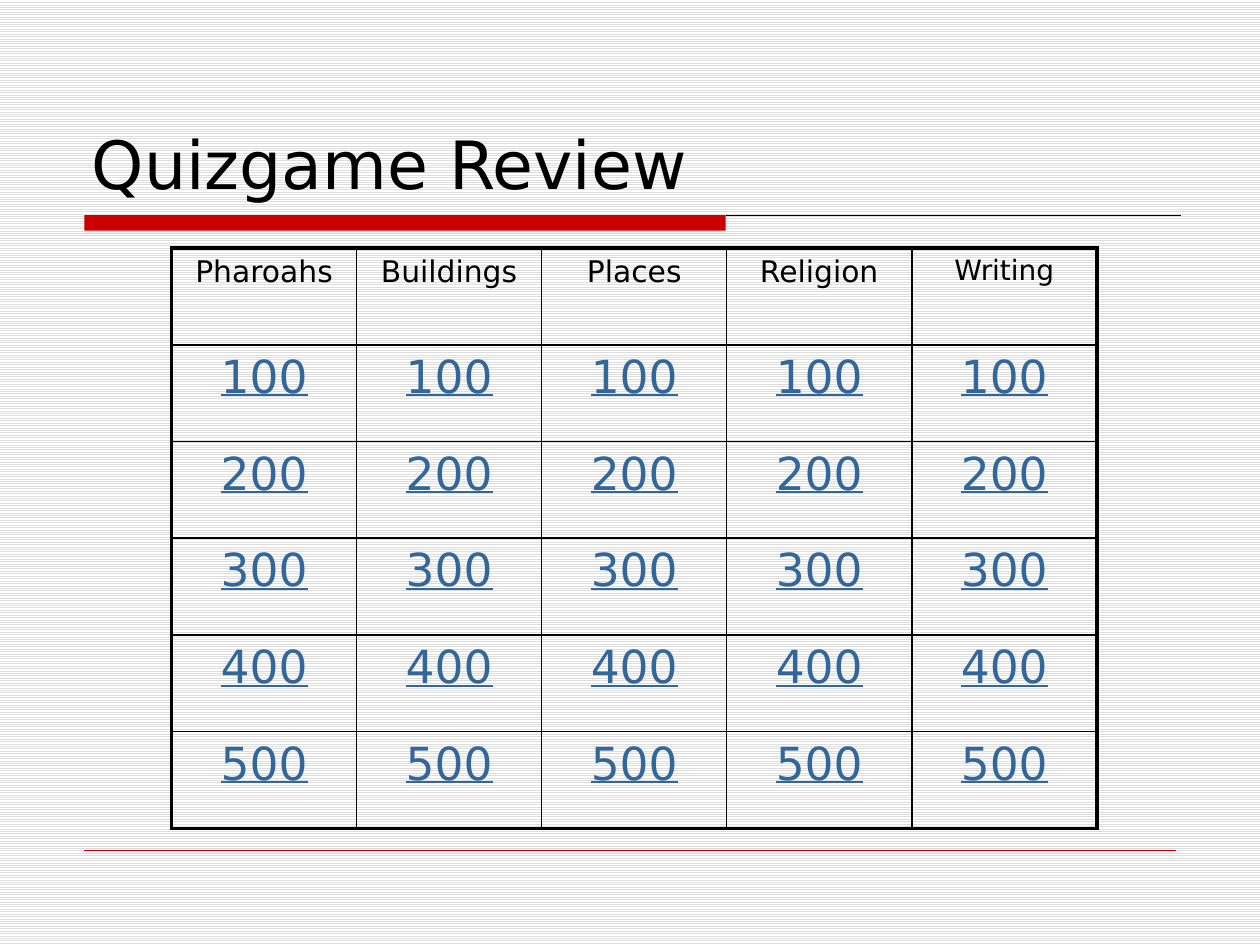
from dataclasses import dataclass

from lxml import etree
from pptx import Presentation
from pptx.dml.color import RGBColor
from pptx.enum import dml, shapes, text
from pptx.oxml import ns
from pptx.util import Cm, Pt


@dataclass(frozen=True)
class Theme:
    font: str = "DejaVu Sans"
    ink: str = "000000"
    red: str = "CC0000"
    link: str = "336699"
    stripe: str = "DDDDDD"
    paper: str = "FFFFFF"
    title: int = 38
    head: int = 17
    small: int = 16
    score: int = 26
    edge: float = 2.25
    grid: float = 1


theme = Theme()


def style(para, size, color):
    for run in para.runs:
        run.font.name = theme.font
        run.font.size = Pt(size)
        run.font.color.rgb = RGBColor.from_string(color)


def rule(x1, x2, y, color, width):
    line = slide.shapes.add_connector(
        shapes.MSO_CONNECTOR.STRAIGHT, Cm(x1), Cm(y), Cm(x2), Cm(y))
    line.line.color.rgb = RGBColor.from_string(color)
    line.line.width = Pt(width)
    etree.SubElement(line._element.spPr, ns.qn("a:effectLst"))


prs = Presentation()
prs.slide_width, prs.slide_height = Cm(25.4), Cm(19.05)
slide = prs.slides.add_slide(prs.slide_layouts[6])

# Striped background
back = slide.background.fill
back.patterned()
back.pattern = dml.MSO_PATTERN.LIGHT_HORIZONTAL
back.fore_color.rgb = RGBColor.from_string(theme.stripe)
back.back_color.rgb = RGBColor.from_string(theme.paper)

# Title bar and rules
bar = slide.shapes.add_shape(
    shapes.MSO_SHAPE.RECTANGLE, Cm(1.7), Cm(4.34), Cm(12.93), Cm(0.31))
bar.shadow.inherit = False
bar.fill.solid()
bar.fill.fore_color.rgb = RGBColor.from_string(theme.red)
bar.line.fill.background()
rule(14.63, 23.8, 4.34, theme.ink, 0.75)
rule(1.7, 23.7, 17.15, theme.red, 0.25)

# Title
box = slide.shapes.add_textbox(Cm(1.6), Cm(0.84), Cm(22.23), Cm(3.38))
frame = box.text_frame
frame.word_wrap = True
frame.vertical_anchor = text.MSO_ANCHOR.BOTTOM
frame.text = "Quizgame Review"
style(frame.paragraphs[0], theme.title, theme.ink)

# Score board: one row of topics, then one row for each score
topics = ["Pharoahs", "Buildings", "Places", "Religion", "Writing"]
rows = [topics] + [[str(score)] * len(topics) for score in range(100, 600, 100)]
wide, high = 3.73, 1.95
table = slide.shapes.add_table(
    len(rows), len(topics), Cm(3.46), Cm(5),
    Cm(wide * len(topics)), Cm(high * len(rows))).table
table.first_row = table.horz_banding = False
for col in table.columns:
    col.width = Cm(wide)
for row in table.rows:
    row.height = Cm(high)

for r, row in enumerate(rows):
    for c, label in enumerate(row):
        cell = table.cell(r, c)
        cell.text_frame.text = label
        para = cell.text_frame.paragraphs[0]
        para.alignment = text.PP_ALIGN.CENTER
        if r:
            style(para, theme.score, theme.link)
            para.runs[0].font.underline = True
        else:
            size = theme.small if label == "Writing" else theme.head
            style(para, size, theme.ink)

        # Thick outer border, thin inner grid
        outer = {"L": c == 0, "R": c == len(topics) - 1,
                 "T": r == 0, "B": r == len(rows) - 1}
        props = cell._tc.get_or_add_tcPr()
        for side, thick in outer.items():
            width = Pt(theme.edge if thick else theme.grid)
            line = etree.SubElement(props, ns.qn(f"a:ln{side}"), w=str(width))
            fill = etree.SubElement(line, ns.qn("a:solidFill"))
            etree.SubElement(fill, ns.qn("a:srgbClr"), val=theme.ink)
        cell.fill.background()

prs.save("out.pptx")
